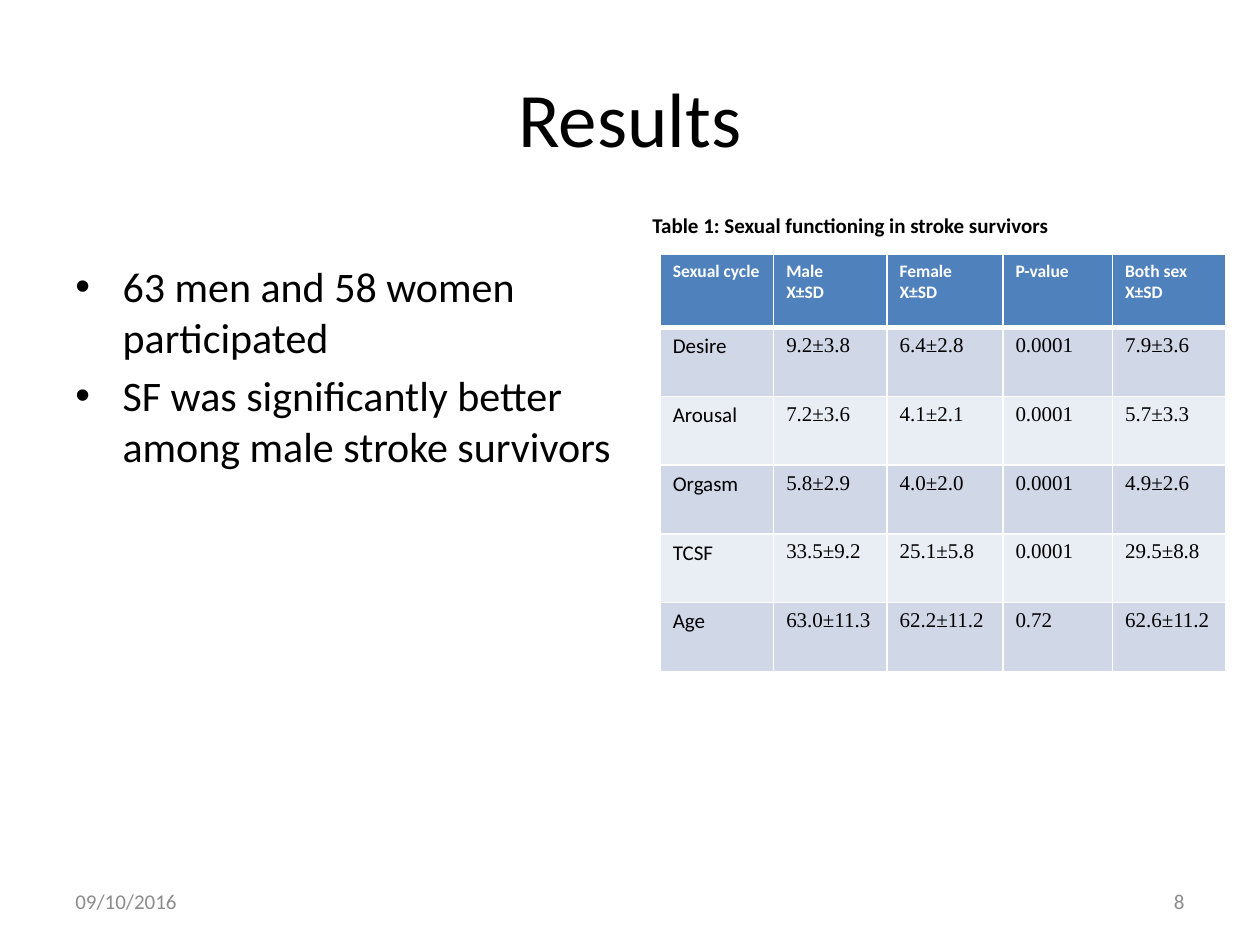
from lxml import etree
from pptx import Presentation, util as u
from pptx.dml import color as dml
from pptx.enum import text as t
from pptx.oxml import ns

WIDTH, HEIGHT = u.Inches(10), u.Inches(7.5)
COLUMNS, ROWS = 100, 75
BLACK, WHITE, GREY = "000000", "FFFFFF", "8C8C8C"
HEADER_FILL, BAND_FILLS = "4F81BD", ("D0D8E8", "E9EDF4")

FINDINGS = [
    "63 men and 58 women participated",
    "SF was significantly better among male stroke survivors",
]
HEADINGS = ["Sexual cycle", "Male\nX±SD", "Female\nX±SD", "P-value", "Both sex\nX±SD"]
RESULTS = [
    ["Desire", "9.2±3.8", "6.4±2.8", "0.0001", "7.9±3.6"],
    ["Arousal", "7.2±3.6", "4.1±2.1", "0.0001", "5.7±3.3"],
    ["Orgasm", "5.8±2.9", "4.0±2.0", "0.0001", "4.9±2.6"],
    ["TCSF", "33.5±9.2", "25.1±5.8", "0.0001", "29.5±8.8"],
    ["Age", "63.0±11.3", "62.2±11.2", "0.72", "62.6±11.2"],
]
COLUMN_WIDTHS = [9, 9, 9.2, 8.7, 9]
HEADER_HEIGHT, ROW_HEIGHT = 5.8, 5.46


def across(columns):
    return round(WIDTH * columns / COLUMNS)


def down(rows):
    return round(HEIGHT * rows / ROWS)


def place(box):
    left, top, width, height = box
    return across(left), down(top), across(width), down(height)


def rgb(value):
    return dml.RGBColor.from_string(value)


def write(frame, content, size=12, font="Calibri", color=BLACK, bold=False,
          align=t.PP_ALIGN.LEFT, space_before=0, bullet=None):
    for index, line in enumerate(content.split("\n")):
        paragraph = frame.add_paragraph() if index else frame.paragraphs[0]
        paragraph.alignment = align
        paragraph.space_before = u.Pt(space_before)
        run = paragraph.add_run()
        run.text = line
        run.font.size, run.font.name, run.font.bold = u.Pt(size), font, bold
        run.font.color.rgb = rgb(color)
        if bullet:
            properties = paragraph._p.get_or_add_pPr()
            indent = across(3.75)
            properties.set("marL", str(indent))
            properties.set("indent", str(-indent))
            etree.SubElement(properties, ns.qn("a:buFont"), typeface="Arial")
            etree.SubElement(properties, ns.qn("a:buChar"), char=bullet)


def add_text(slide, box, content, anchor=t.MSO_ANCHOR.MIDDLE, **style):
    frame = slide.shapes.add_textbox(*place(box)).text_frame
    frame.word_wrap = True
    frame.vertical_anchor = anchor
    write(frame, content, **style)


def add_borders(cell, bottom):
    properties = cell._tc.get_or_add_tcPr()
    for side, points in (("L", 1), ("R", 1), ("T", 1), ("B", bottom)):
        line = etree.SubElement(properties, ns.qn(f"a:ln{side}"), w=str(u.Pt(points)))
        fill = etree.SubElement(line, ns.qn("a:solidFill"))
        etree.SubElement(fill, ns.qn("a:srgbClr"), val=WHITE)


def fill_cell(cell, content, fill, bottom=1, **style):
    add_borders(cell, bottom)
    cell.fill.solid()
    cell.fill.fore_color.rgb = rgb(fill)
    write(cell.text_frame, content, **style)


def add_results_table(slide, left, top):
    height = HEADER_HEIGHT + ROW_HEIGHT * len(RESULTS)
    box = left, top, sum(COLUMN_WIDTHS), height
    table = slide.shapes.add_table(len(RESULTS) + 1, len(HEADINGS), *place(box)).table
    for column, width in zip(table.columns, COLUMN_WIDTHS):
        column.width = across(width)
    for index, row in enumerate(table.rows):
        row.height = down(ROW_HEIGHT if index else HEADER_HEIGHT)
    for column, heading in enumerate(HEADINGS):
        fill_cell(table.cell(0, column), heading, HEADER_FILL, bottom=3,
                  size=10, color=WHITE, bold=True)
    for row, values in enumerate(RESULTS):
        for column, value in enumerate(values):
            fill_cell(table.cell(row + 1, column), value, BAND_FILLS[row % 2],
                      font="Times New Roman" if column else "Calibri")


def add_comparison(slide, box):
    left, top, width, height = box
    add_text(slide, (left, top, width, 2.6), "Table 1: Sexual functioning in stroke survivors",
             anchor=t.MSO_ANCHOR.BOTTOM, bold=True, space_before=2.4)
    add_results_table(slide, left + 1.6, top + 3.4)


def add_footer(slide, box):
    left, top, width, height = box
    part = 23.3
    add_text(slide, (left, top, part, height), "09/10/2016", color=GREY)
    add_text(slide, (left + width - part, top, part, height), "8", color=GREY,
             align=t.PP_ALIGN.RIGHT)


def main():
    presentation = Presentation()
    presentation.slide_width, presentation.slide_height = WIDTH, HEIGHT
    slide = presentation.slides.add_slide(presentation.slide_layouts[6])
    add_text(slide, (5, 3, 90, 12.5), "Results", size=44, align=t.PP_ALIGN.CENTER)
    add_text(slide, (5, 20.2, 47.4, 46.8), "\n".join(FINDINGS), anchor=t.MSO_ANCHOR.TOP,
             size=24, space_before=4.8, bullet="•")
    add_comparison(slide, (50.8, 16.8, 44.2, 36.5))
    add_footer(slide, (5, 69.5, 90, 4))
    presentation.save("out.pptx")


if __name__ == "__main__":
    main()
